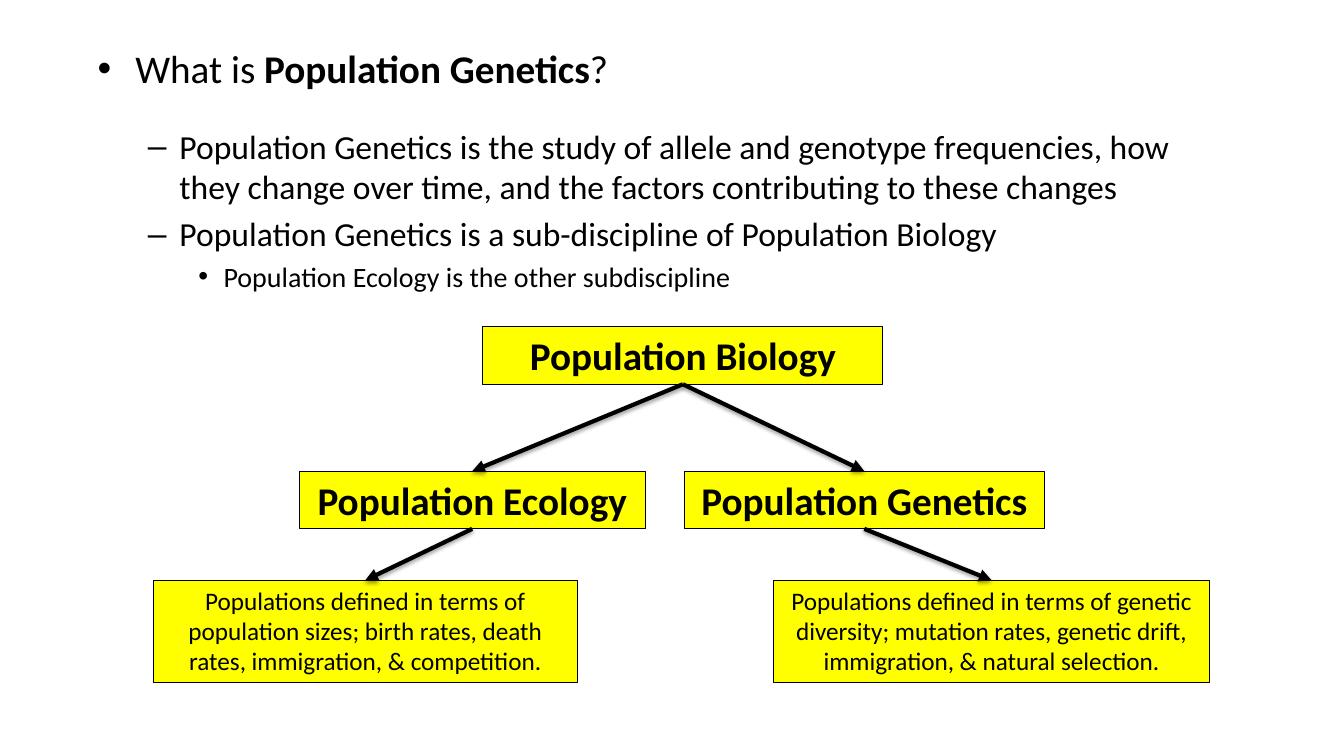
"""Build a slide that defines population genetics and its place in population biology."""
from lxml import etree
from pptx import Presentation
from pptx.dml.color import RGBColor
from pptx.enum.shapes import MSO_CONNECTOR as CONNECTOR, MSO_SHAPE as SHAPE
from pptx.enum.text import MSO_ANCHOR as ANCHOR, PP_ALIGN as ALIGN
from pptx.oxml import parse_xml
from pptx.oxml.ns import nsdecls, qn
from pptx.util import Pt

COLORS = {"ink": "000000", "box": "FFFF00"}
TOP, BOTTOM = 0, 2


def write(paragraph, text, size=24, bold=False, color="ink"):
    run = paragraph.add_run()
    run.text = text
    run.font.name = "Calibri"
    run.font.size = Pt(size)
    run.font.bold = bold
    run.font.color.rgb = RGBColor.from_string(COLORS[color])


presentation = Presentation()
presentation.slide_width, presentation.slide_height = Pt(960), Pt(540)
slide = presentation.slides.add_slide(presentation.slide_layouts[6])

outline = slide.shapes.add_textbox(Pt(62.6), Pt(28.1), Pt(801.4), Pt(241.2))
outline.text_frame.word_wrap = True
levels = [
    {"bullet": "•", "size": 28, "margin": 27, "hanging": 27},
    {"bullet": "–", "size": 24, "margin": 58.5, "hanging": 22.5},
    {"bullet": "•", "size": 20, "margin": 90, "hanging": 18},
]
points = [
    (0, 5.6, [("What is ", False), ("Population Genetics", True), ("?", False)]),
    (1, 24.7, [("Population Genetics is the study of allele and genotype frequencies, how "
                "they change over time, and the factors contributing to these changes", False)]),
    (1, 4.8, [("Population Genetics is a sub-discipline of Population Biology", False)]),
    (2, 4, [("Population Ecology is the other subdiscipline", False)]),
]
for index, (depth, space, pieces) in enumerate(points):
    frame = outline.text_frame
    paragraph = frame.add_paragraph() if index else frame.paragraphs[0]
    level = levels[depth]
    paragraph.level = depth
    paragraph.space_before = Pt(space)
    properties = paragraph._p.get_or_add_pPr()
    properties.set("marL", str(Pt(level["margin"])))
    properties.set("indent", str(-Pt(level["hanging"])))
    etree.SubElement(properties, qn("a:buFont")).set("typeface", "Arial")
    etree.SubElement(properties, qn("a:buChar")).set("char", level["bullet"])
    for text, bold in pieces:
        write(paragraph, text, size=level["size"], bold=bold)

boxes = {
    "biology": (344.9, 233.3, 285.8, 41.2, 28, "Population Biology"),
    "ecology": (213.8, 336.6, 247, 41.2, 28, "Population Ecology"),
    "genetics": (488.9, 336.6, 257, 41.2, 28, "Population Genetics"),
    "ecology detail": (109.4, 414.5, 303.1, 72.7, 18,
                       "Populations defined in terms of population sizes; birth rates, "
                       "death rates, immigration, & competition."),
    "genetics detail": (552.6, 414.5, 311.4, 72.7, 18,
                        "Populations defined in terms of genetic diversity; mutation rates, "
                        "genetic drift, immigration, & natural selection."),
}
shapes = {}
for name, (left, top, width, height, size, text) in boxes.items():
    shape = slide.shapes.add_shape(SHAPE.RECTANGLE, Pt(left), Pt(top), Pt(width), Pt(height))
    shape.shadow.inherit = False
    shape.fill.solid()
    shape.fill.fore_color.rgb = RGBColor.from_string(COLORS["box"])
    shape.line.color.rgb = RGBColor.from_string(COLORS["ink"])
    shape.line.width = Pt(0.75)
    shape.text_frame.word_wrap = True
    shape.text_frame.vertical_anchor = ANCHOR.TOP
    paragraph = shape.text_frame.paragraphs[0]
    paragraph.alignment = ALIGN.CENTER
    write(paragraph, text, size=size, bold=size == 28)
    shapes[name] = shape

arrows = [
    ("biology", "ecology"),
    ("biology", "genetics"),
    ("ecology", "ecology detail"),
    ("genetics", "genetics detail"),
]
for parent, child in arrows:
    arrow = slide.shapes.add_connector(CONNECTOR.STRAIGHT, 0, 0, 0, 0)
    arrow.begin_connect(shapes[parent], BOTTOM)
    arrow.end_connect(shapes[child], TOP)
    arrow.line.color.rgb = RGBColor.from_string(COLORS["ink"])
    arrow.line.width = Pt(3)
    etree.SubElement(arrow.line._get_or_add_ln(), qn("a:tailEnd")).set("type", "triangle")
    arrow._element.spPr.append(parse_xml(
        f'<a:effectLst {nsdecls("a")}>'
        f'<a:outerShdw blurRad="{Pt(3.1)}" dist="{Pt(1.6)}" dir="5400000" rotWithShape="0">'
        f'<a:srgbClr val="{COLORS["ink"]}"><a:alpha val="38000"/></a:srgbClr>'
        '</a:outerShdw></a:effectLst>'))

presentation.save("out.pptx")
